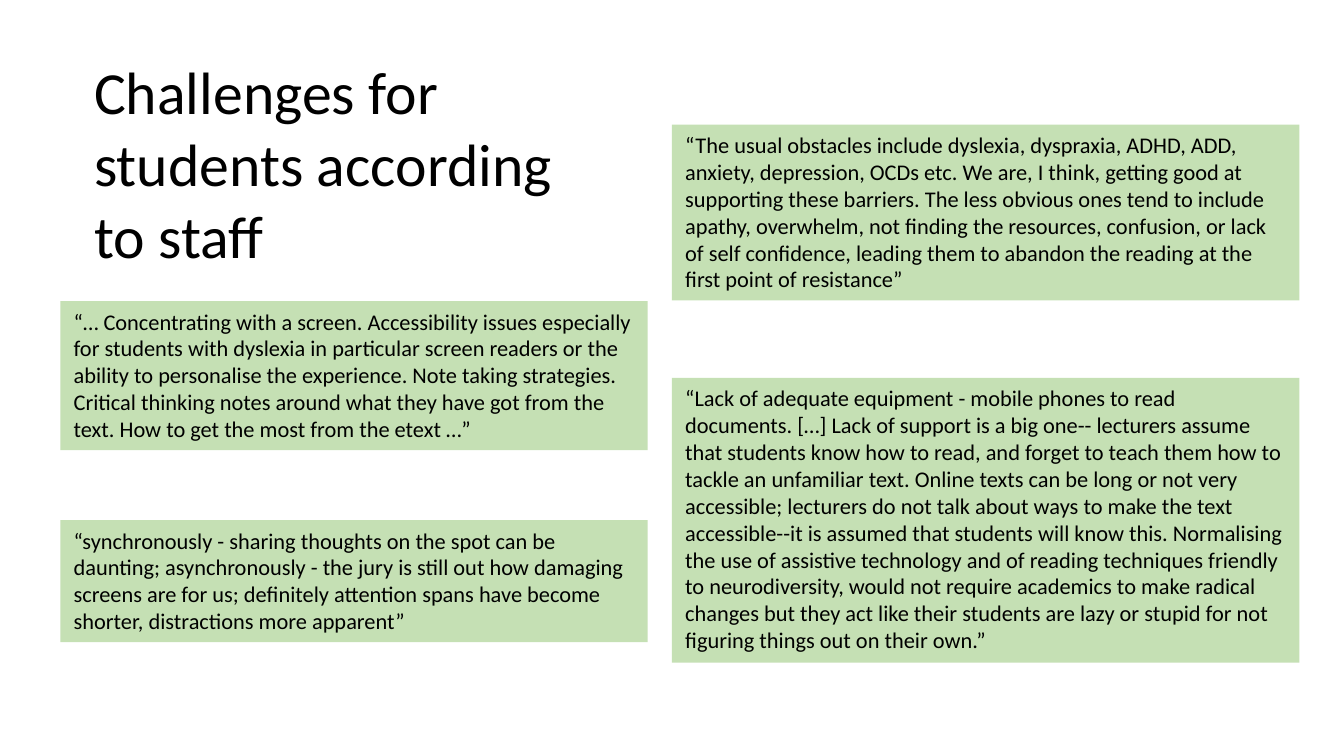
from pptx import Presentation
from pptx.dml.color import RGBColor
from pptx.enum.text import MSO_ANCHOR, MSO_AUTO_SIZE, PP_ALIGN
from pptx.util import Pt

COLORS = {"text": "000000", "quote": "C5E0B4"}
FONT = "Calibri"

# Quote columns: left edge and width
LEFT = (32.4, 314.6)
RIGHT = (360, 336.2)

# Column, top, height, wording
QUOTES = [
    (LEFT, 161.3, 79.9,
     "“… Concentrating with a screen. Accessibility issues especially for "
     "students with dyslexia in particular screen readers or the ability to "
     "personalise the experience. Note taking strategies. Critical thinking "
     "notes around what they have got from the text. How to get the most "
     "from the etext …”"),
    (LEFT, 278.6, 65.5,
     "“synchronously - sharing thoughts on the spot can be daunting; "
     "asynchronously - the jury is still out how damaging screens are for "
     "us; definitely attention spans have become shorter, distractions more "
     "apparent”"),
    (RIGHT, 66.7, 94.3,
     "“The usual obstacles include dyslexia, dyspraxia, ADHD, ADD, anxiety, "
     "depression, OCDs etc. We are, I think, getting good at supporting these "
     "barriers. The less obvious ones tend to include apathy, overwhelm, not "
     "finding the resources, confusion, or lack of self confidence, leading "
     "them to abandon the reading at the first point of resistance”"),
    (RIGHT, 202.4, 152.6,
     "“Lack of adequate equipment - mobile phones to read documents. […] Lack "
     "of support is a big one-- lecturers assume that students know how to "
     "read, and forget to teach them how to tackle an unfamiliar text. Online "
     "texts can be long or not very accessible; lecturers do not talk about "
     "ways to make the text accessible--it is assumed that students will know "
     "this. Normalising the use of assistive technology and of reading "
     "techniques friendly to neurodiversity, would not require academics to "
     "make radical changes but they act like their students are lazy or "
     "stupid for not figuring things out on their own.”"),
]


def write(shape, text, size):
    """Put one left-aligned run into a wrapping frame that fits its text."""
    frame = shape.text_frame
    frame.word_wrap = True
    frame.auto_size = MSO_AUTO_SIZE.SHAPE_TO_FIT_TEXT
    frame.vertical_anchor = MSO_ANCHOR.TOP
    para = frame.paragraphs[0]
    para.alignment = PP_ALIGN.LEFT
    run = para.add_run()
    run.text = text
    run.font.name = FONT
    run.font.size = Pt(size)
    run.font.color.rgb = RGBColor.from_string(COLORS["text"])


def add_title(slide, text):
    title = slide.shapes.title
    title.left, title.top = Pt(43.2), Pt(25.9)
    title.width, title.height = Pt(292.3), Pt(123.8)
    write(title, text, 32)


def add_quote(slide, column, top, height, text):
    left, width = column
    box = slide.shapes.add_textbox(Pt(left), Pt(top), Pt(width), Pt(height))
    box.fill.solid()
    box.fill.fore_color.rgb = RGBColor.from_string(COLORS["quote"])
    write(box, text, 12)


def main():
    deck = Presentation()
    deck.slide_width, deck.slide_height = Pt(720), Pt(405)
    slide = deck.slides.add_slide(deck.slide_layouts[5])

    add_title(slide, "Challenges for students according to staff")
    for quote in QUOTES:
        add_quote(slide, *quote)

    deck.save("out.pptx")


if __name__ == "__main__":
    main()
